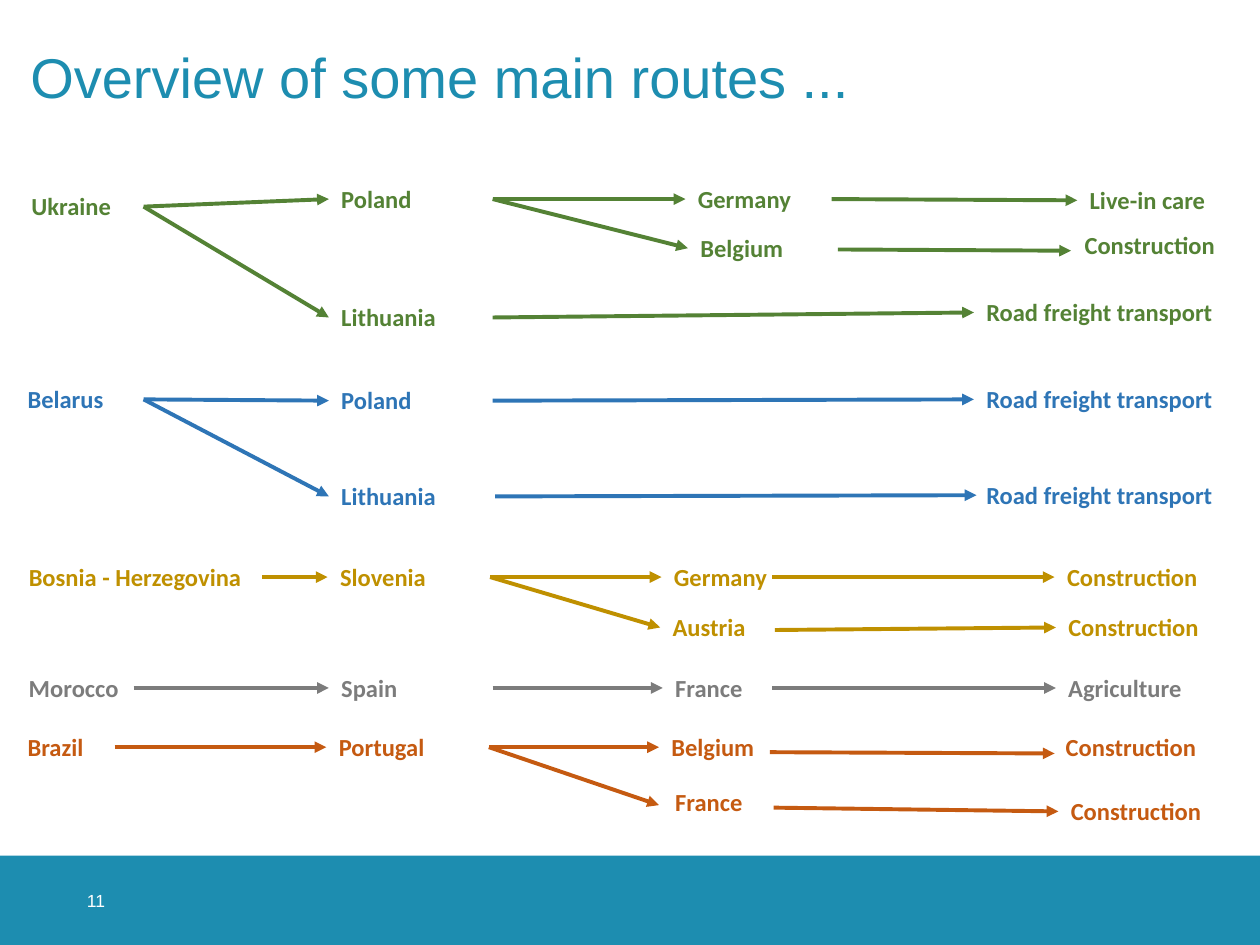
"""Build a slide that maps the main labour migration routes."""
from dataclasses import dataclass
from typing import Optional

from lxml import etree
from pptx import Presentation
from pptx import util as u
from pptx.dml.color import RGBColor
from pptx.enum import shapes, text
from pptx.oxml import ns

TEAL = "1D8DB0"
WHITE = "FFFFFF"
STOP_HEIGHT = 0.34
LEFT_SIDE, RIGHT_SIDE = 1, 3
Point = tuple[float, float]


@dataclass(frozen=True)
class Stop:
    """A labelled stop; start and end place the incoming arrow where it is not joined."""
    label: str
    left: float
    top: float
    width: float
    onward: tuple["Stop", ...] = ()
    start: Optional[Point] = None
    end: Optional[Point] = None


@dataclass(frozen=True)
class Route:
    color: str
    origin: Stop


ROUTES = (
    Route("548235", Stop("Ukraine", 0.15, 1.47, 0.99, (
        Stop("Poland", 2.61, 1.41, 1.3, (
            Stop("Germany", 5.44, 1.41, 1.16, (
                Stop("Live-in care", 8.55, 1.42, 1.16),)),
            Stop("Belgium", 5.46, 1.8, 1.16, (
                Stop("Construction", 8.51, 1.78, 1.26, start=(6.65, 1.98), end=(8.5, 1.99)),)),
        )),
        Stop("Lithuania", 2.61, 2.35, 1.3, (
            Stop("Road freight transport", 7.73, 2.31, 2.14),)),
    ))),
    Route("2E75B6", Stop("Belarus", 0.12, 3, 1.02, (
        Stop("Poland", 2.61, 3.01, 1.3, (
            Stop("Road freight transport", 7.73, 3, 2.14),)),
        Stop("Lithuania", 2.61, 3.77, 1.3, (
            Stop("Road freight transport", 7.73, 3.76, 2.14, start=(3.93, 3.94), end=(7.75, 3.93)),)),
    ))),
    Route("BF9000", Stop("Bosnia - Herzegovina", 0.13, 4.41, 2.11, (
        Stop("Slovenia", 2.6, 4.41, 1.29, (
            Stop("Germany", 5.25, 4.41, 1.16, (
                Stop("Construction", 8.37, 4.41, 1.49, start=(6.13, 4.58)),)),
            Stop("Austria", 5.24, 4.81, 1.16, (
                Stop("Construction", 8.38, 4.81, 1.49, start=(6.15, 5)),)),
        ), start=(2.08, 4.58)),
    ))),
    Route("7C7C7C", Stop("Morocco", 0.13, 5.29, 0.93, (
        Stop("Spain", 2.61, 5.29, 1.3, (
            Stop("France", 5.26, 5.29, 0.87, (
                Stop("Agriculture", 8.38, 5.29, 1.16),)),
        )),
    ))),
    Route("C55A11", Stop("Brazil", 0.12, 5.76, 0.79, (
        Stop("Portugal", 2.59, 5.76, 1.29, (
            Stop("Belgium", 5.23, 5.76, 1.16, (
                Stop("Construction", 8.36, 5.76, 1.37, start=(6.11, 5.97), end=(8.37, 5.98)),)),
            Stop("France", 5.26, 6.2, 1.16, (
                Stop("Construction", 8.4, 6.27, 1.37, start=(6.14, 6.41)),), end=(5.23, 6.39)),
        )),
    ))),
)


def rgb(color: str) -> RGBColor:
    return RGBColor.from_string(color)


def write(shape, words: str, font: str, size: float, color: str, bold: bool = False) -> None:
    """Put one formatted line of text in a shape."""
    shape.text_frame.text = words
    span = shape.text_frame.paragraphs[0].runs[0]
    span.font.name = font
    span.font.size = u.Pt(size)
    span.font.bold = bold
    span.font.color.rgb = rgb(color)


def clear_margins(frame) -> None:
    frame.margin_left = frame.margin_top = frame.margin_right = frame.margin_bottom = 0


def add_title(page) -> None:
    title = page.shapes.title
    title.left, title.top = u.Inches(0.24), u.Inches(0.4)
    title.width, title.height = u.Inches(9.54), u.Inches(1.45)
    write(title, "Overview of some main routes ...", "Arial", 32, TEAL)
    frame = title.text_frame
    clear_margins(frame)
    frame.word_wrap = True
    frame.auto_size = text.MSO_AUTO_SIZE.NONE
    frame.vertical_anchor = text.MSO_ANCHOR.TOP
    para = frame.paragraphs[0]
    para.alignment = text.PP_ALIGN.LEFT
    para.line_spacing = 0.9


def add_footer(page) -> None:
    top, height = u.Inches(6.79), u.Inches(0.71)
    band = page.shapes.add_shape(shapes.MSO_SHAPE.RECTANGLE, 0, top, u.Inches(10), height)
    band.shadow.inherit = False
    band.fill.solid()
    band.fill.fore_color.rgb = rgb(TEAL)
    band.line.fill.background()
    number = page.shapes.add_textbox(u.Inches(0.69), top, u.Inches(0.71), height)
    write(number, "11", "Arial", 10, WHITE)
    clear_margins(number.text_frame)
    number.text_frame.word_wrap = True
    number.text_frame.vertical_anchor = text.MSO_ANCHOR.MIDDLE


def add_arrow(page, origin_box, goal_box, goal: Stop, color: str) -> None:
    """Draw the arrow into a stop, joined to the boxes where no point is given."""
    start_x, start_y = goal.start or (0, 0)
    end_x, end_y = goal.end or (0, 0)
    arrow = page.shapes.add_connector(
        shapes.MSO_CONNECTOR.STRAIGHT,
        u.Inches(start_x), u.Inches(start_y), u.Inches(end_x), u.Inches(end_y))
    if goal.start is None:
        arrow.begin_connect(origin_box, RIGHT_SIDE)
    if goal.end is None:
        arrow.end_connect(goal_box, LEFT_SIDE)
    arrow.line.color.rgb = rgb(color)
    arrow.line.width = u.Pt(2.25)
    etree.SubElement(arrow.line._get_or_add_ln(), ns.qn("a:tailEnd"), type="triangle")
    etree.SubElement(arrow._element.spPr, ns.qn("a:effectLst"))


def add_stop(page, stop: Stop, color: str):
    """Draw a stop with everything that lies beyond it, and return its box."""
    box = page.shapes.add_textbox(
        u.Inches(stop.left), u.Inches(stop.top), u.Inches(stop.width), u.Inches(STOP_HEIGHT))
    write(box, stop.label, "Calibri", 14, color, bold=True)
    box.text_frame.word_wrap = True
    box.text_frame.auto_size = text.MSO_AUTO_SIZE.SHAPE_TO_FIT_TEXT
    for goal in stop.onward:
        goal_box = add_stop(page, goal, color)
        add_arrow(page, box, goal_box, goal, color)
    return box


def main() -> None:
    deck = Presentation()
    deck.slide_width, deck.slide_height = u.Inches(10), u.Inches(7.5)
    page = deck.slides.add_slide(deck.slide_layouts.get_by_name("Title Only"))
    add_title(page)
    add_footer(page)
    for route in ROUTES:
        add_stop(page, route.origin, route.color)
    deck.save("out.pptx")


if __name__ == "__main__":
    main()
